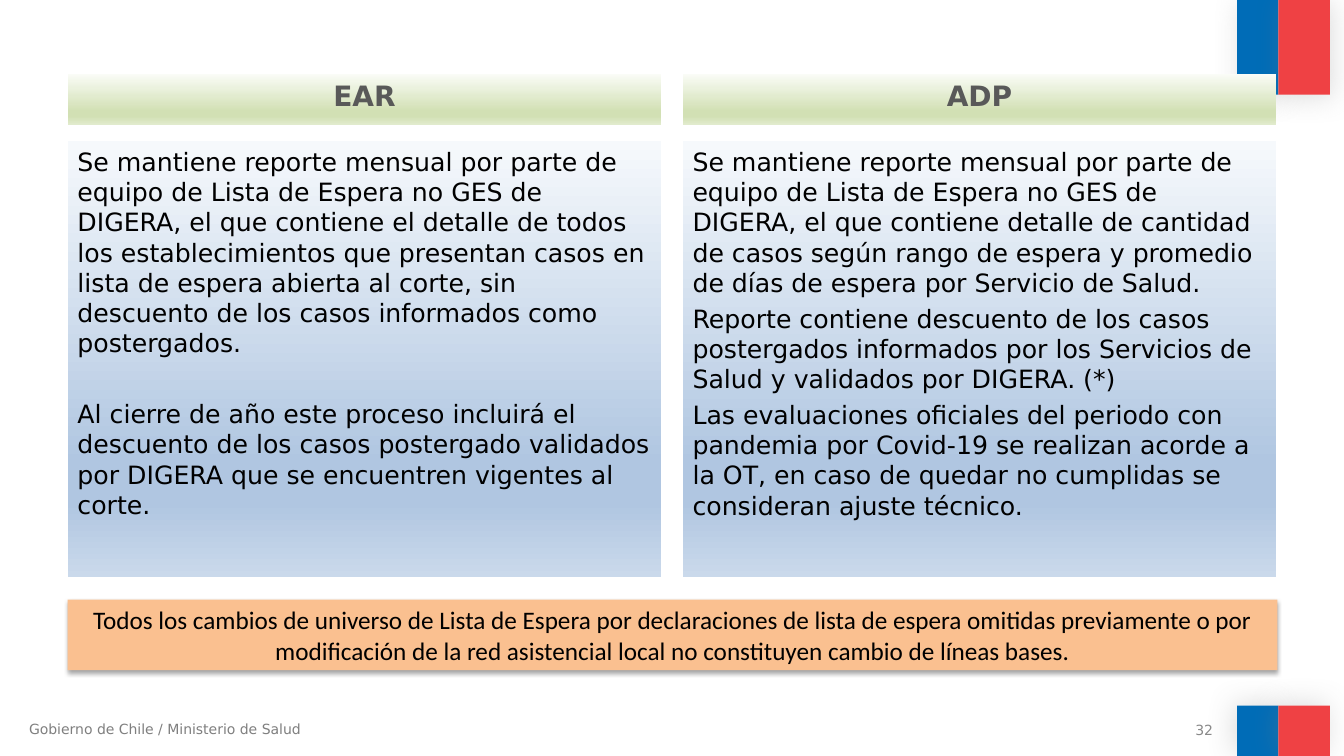
from lxml import etree
from pptx import Presentation
from pptx.dml.color import RGBColor
from pptx.enum.shapes import MSO_SHAPE
from pptx.enum.text import MSO_ANCHOR, PP_ALIGN
from pptx.oxml.ns import qn
from pptx.util import Inches, Pt

BLUE = RGBColor(0x00, 0x6C, 0xB7)
RED = RGBColor(0xEF, 0x41, 0x44)
ORANGE = RGBColor(0xFA, 0xC0, 0x90)
BLACK = RGBColor(0x00, 0x00, 0x00)
SHADOW_GRAY = RGBColor(0x80, 0x80, 0x80)
HEADER_GRAY = RGBColor(0x59, 0x59, 0x59)
FOOTER_GRAY = RGBColor(0x7F, 0x7F, 0x7F)
NUMBER_GRAY = RGBColor(0x89, 0x89, 0x89)

GRADIENT_STOPS = (0, 74, 83, 100)
GREENS = [RGBColor.from_string(c) for c in ("FAFCF7", "D2E0B4", "D2E0B4", "E1EBCD")]
BLUES = [RGBColor.from_string(c) for c in ("F6F9FC", "B0C6E1", "B0C6E1", "CAD9EB")]

SANS = "DejaVu Sans"
LEFT, COLUMN_STEP, COLUMN_WIDTH = 0.67, 6.1, 5.89

# Each column: title, paragraphs, points between paragraphs
COLUMNS = [
    ("EAR", [
        "Se mantiene reporte mensual por parte de equipo de Lista de Espera no GES de "
        "DIGERA, el que contiene el detalle de todos los establecimientos que presentan "
        "casos en lista de espera abierta al corte, sin descuento de los casos informados "
        "como postergados.",
        "Al cierre de año este proceso incluirá el descuento de los casos postergado "
        "validados por DIGERA que se encuentren vigentes al corte.",
    ], 29),
    ("ADP", [
        "Se mantiene reporte mensual por parte de equipo de Lista de Espera no GES de "
        "DIGERA, el que contiene detalle de cantidad de casos según rango de espera y "
        "promedio de días de espera por Servicio de Salud.",
        "Reporte contiene descuento de los casos postergados informados por los Servicios "
        "de Salud y validados por DIGERA. (*)",
        "Las evaluaciones oficiales del periodo con pandemia por Covid-19 se realizan "
        "acorde a la OT, en caso de quedar no cumplidas se consideran ajuste técnico.",
    ], 4),
]
NOTICE = ("Todos los cambios de universo de Lista de Espera por declaraciones de lista de "
          "espera omitidas previamente o por modificación de la red asistencial local no "
          "constituyen cambio de líneas bases.")


def add_rect(slide, x, y, w, h, color=None):
    sp = slide.shapes.add_shape(MSO_SHAPE.RECTANGLE, Inches(x), Inches(y), Inches(w), Inches(h))
    sp.shadow.inherit = False
    sp.line.fill.background()
    if color is not None:
        sp.fill.solid()
        sp.fill.fore_color.rgb = color
    return sp


def set_gradient(sp, colors):
    """Fill from top to bottom with one colour per gradient stop."""
    sp.fill.gradient()
    sp.fill.gradient_angle = 270
    stops = sp._element.spPr.find(".//" + qn("a:gsLst"))
    for old in list(stops):
        stops.remove(old)
    for percent, color in zip(GRADIENT_STOPS, colors):
        gs = etree.SubElement(stops, qn("a:gs"), pos=str(percent * 1000))
        etree.SubElement(gs, qn("a:srgbClr"), val=str(color))


def add_shadow(sp, color, opacity, blur, distance, angle):
    effects = sp._element.spPr.find(qn("a:effectLst"))
    shadow = etree.SubElement(effects, qn("a:outerShdw"), blurRad=str(Pt(blur)),
                              dist=str(Pt(distance)), dir=str(angle * 60000),
                              rotWithShape="0")
    clr = etree.SubElement(shadow, qn("a:srgbClr"), val=str(color))
    etree.SubElement(clr, qn("a:alpha"), val=str(opacity * 1000))


def set_text(sp, paragraphs, size, color, font=SANS, bold=False, align=PP_ALIGN.LEFT,
             anchor=MSO_ANCHOR.TOP, gap=0):
    tf = sp.text_frame
    tf.word_wrap = True
    tf.vertical_anchor = anchor
    tf.text = "\n".join(paragraphs)
    for i, p in enumerate(tf.paragraphs):
        p.alignment = align
        p.space_before = Pt(gap if i else 0)
        for r in p.runs:
            r.font.name = font
            r.font.size = Pt(size)
            r.font.bold = bold
            r.font.color.rgb = color


def add_label(slide, x, y, w, h, text, color, **options):
    sp = slide.shapes.add_textbox(Inches(x), Inches(y), Inches(w), Inches(h))
    set_text(sp, [text], 10, color, **options)


def add_flag(slide, y, blue_height, red_height, shadow_angle):
    for x, w, h, color in ((12.27, 0.41, blue_height, BLUE), (12.68, 0.51, red_height, RED)):
        add_shadow(add_rect(slide, x, y, w, h, color), SHADOW_GRAY, 25, 20, 3, shadow_angle)


def add_column(slide, x, title, paragraphs, gap):
    header = add_rect(slide, x, 0.73, COLUMN_WIDTH, 0.51)
    set_gradient(header, GREENS)
    set_text(header, [title], 20, HEADER_GRAY, bold=True, align=PP_ALIGN.CENTER)
    body = add_rect(slide, x, 1.4, COLUMN_WIDTH, 4.32)
    set_gradient(body, BLUES)
    set_text(body, paragraphs, 18, BLACK, gap=gap)


def add_notice(slide):
    sp = add_rect(slide, LEFT, 5.95, 12, 0.7, ORANGE)
    add_shadow(sp, BLACK, 35, 3.1, 1.8, 90)
    set_text(sp, [NOTICE], 18, BLACK, font="Calibri", align=PP_ALIGN.CENTER,
             anchor=MSO_ANCHOR.MIDDLE)


def main():
    prs = Presentation()
    prs.slide_width = Inches(13.33)
    prs.slide_height = Inches(7.5)
    s = prs.slides.add_slide(prs.slide_layouts[6])
    add_flag(s, 0, 0.94, 0.94, 45)
    add_flag(s, 7, 0.5, 0.5, 215)
    add_label(s, 0.19, 7.1, 4.03, 0.27, "Gobierno de Chile / Ministerio de Salud", FOOTER_GRAY)
    for i, (title, paragraphs, gap) in enumerate(COLUMNS):
        add_column(s, LEFT + i * COLUMN_STEP, title, paragraphs, gap)
    add_label(s, 9.02, 7.14, 3.11, 0.21, "32", NUMBER_GRAY, align=PP_ALIGN.RIGHT,
              anchor=MSO_ANCHOR.MIDDLE)
    add_notice(s)
    prs.save("out.pptx")


if __name__ == "__main__":
    main()
